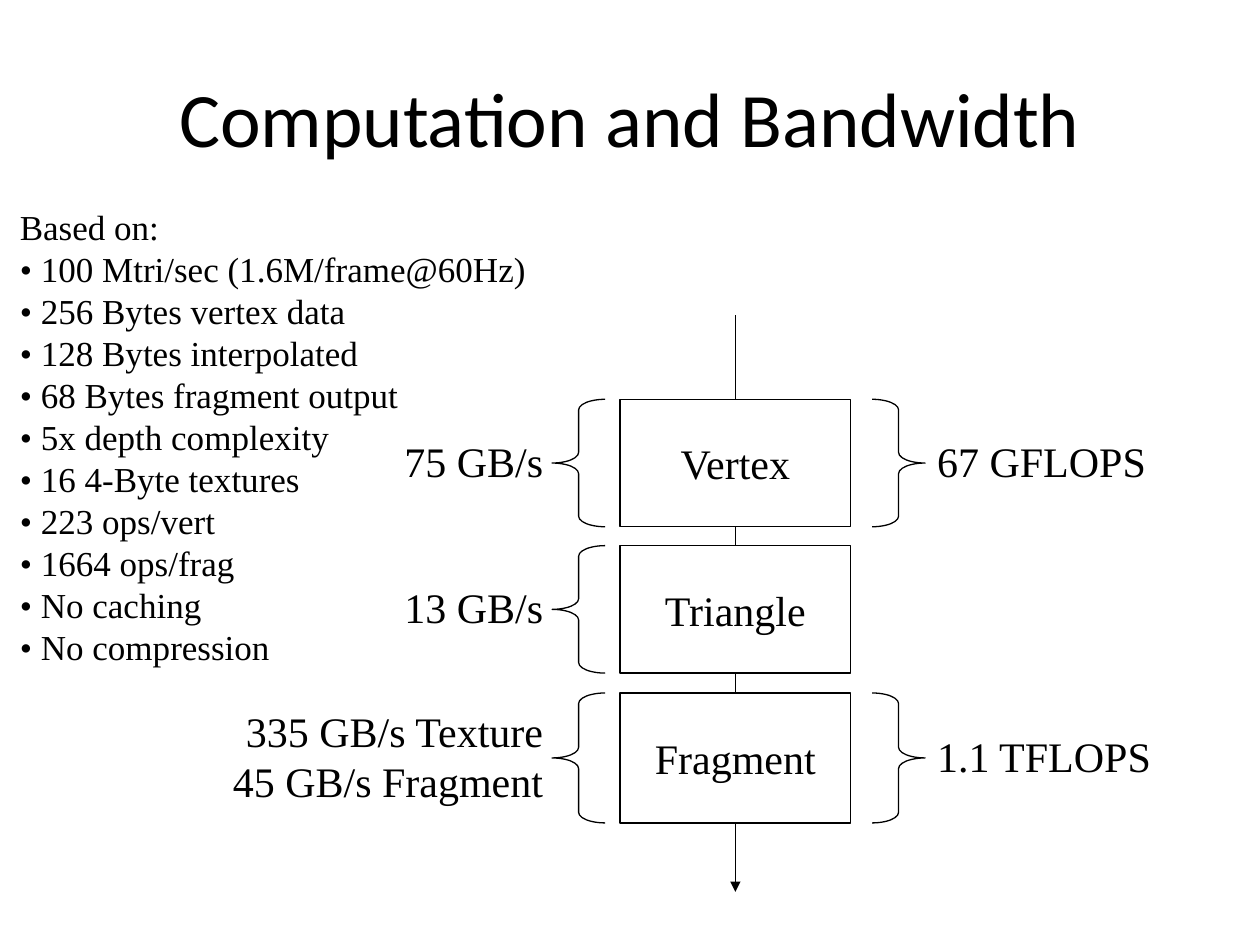
from lxml import etree
from pptx import Presentation
from pptx.dml.color import RGBColor
from pptx.enum import shapes, text
from pptx.oxml import ns
from pptx.util import Cm, Pt

INK = "000000"
SERIF = "Times New Roman"
LEFT, CENTER, RIGHT = text.PP_ALIGN.LEFT, text.PP_ALIGN.CENTER, text.PP_ALIGN.RIGHT

ASSUMPTIONS = [
    "100 Mtri/sec (1.6M/frame@60Hz)",
    "256 Bytes vertex data",
    "128 Bytes interpolated",
    "68 Bytes fragment output",
    "5x depth complexity",
    "16 4-Byte textures",
    "223 ops/vert",
    "1664 ops/frag",
    "No caching",
    "No compression",
]
STAGES = [
    ("Vertex", 8.05, 2.57, ["75 GB/s"], 3.3, "67 GFLOPS", 4.72),
    ("Triangle", 11, 2.57, ["13 GB/s"], 3.3, None, 0),
    ("Fragment", 13.97, 2.62, ["335 GB/s Texture", "45 GB/s Fragment"], 6.76,
     "1.1 TFLOPS", 4.85),
]


def color(value):
    return RGBColor.from_string(value)


def write(shape, lines, size, font=SERIF, align=LEFT,
          anchor=text.MSO_ANCHOR.MIDDLE, wrap=True):
    frame = shape.text_frame
    frame.text = "\n".join(lines)
    frame.word_wrap = wrap
    frame.vertical_anchor = anchor
    for para in frame.paragraphs:
        para.alignment = align
        for span in para.runs:
            span.font.size = Pt(size)
            span.font.name = font
            span.font.color.rgb = color(INK)


def add_text(page, left, top, width, height, lines, size, **style):
    box = page.shapes.add_textbox(Cm(left), Cm(top), Cm(width), Cm(height))
    write(box, lines, size, **style)


def add_outline(page, kind, left, top, width, height):
    shape = page.shapes.add_shape(kind, Cm(left), Cm(top), Cm(width), Cm(height))
    shape.shadow.inherit = False
    shape.fill.background()
    shape.line.color.rgb = color(INK)
    shape.line.width = Pt(0.75)
    return shape


def add_brace(page, kind, left, top, height):
    brace = add_outline(page, kind, left, top, 1.07, height)
    brace.adjustments[0] = 0.2
    brace.adjustments[1] = 0.5


def add_stage(page, left, width, stage):
    name, top, height, bandwidth, bandwidth_width, compute, compute_width = stage
    right = left + width
    label_height = 0.25 + 1.02 * len(bandwidth)
    middle = top + height / 2 - 0.05

    add_brace(page, shapes.MSO_SHAPE.LEFT_BRACE, left - 1.37, top, height)
    add_text(page, left - 1.3 - bandwidth_width, middle - label_height / 2,
             bandwidth_width, label_height, bandwidth, 24, align=RIGHT, wrap=False)
    if compute:
        add_brace(page, shapes.MSO_SHAPE.RIGHT_BRACE, right + 0.43, top, height)
        add_text(page, right + 1.49, middle - 0.64, compute_width, 1.27,
                 [compute], 24, wrap=False)

    block = add_outline(page, shapes.MSO_SHAPE.RECTANGLE, left, top, width, height)
    write(block, [name], 24, align=CENTER)
    return block


def add_flow(page, x, start, end, source=None, target=None):
    line = page.shapes.add_connector(
        shapes.MSO_CONNECTOR.STRAIGHT, Cm(x), Cm(start), Cm(x), Cm(end))
    line.line.color.rgb = color(INK)
    line.line.width = Pt(0.75)
    if source is not None:
        line.begin_connect(source, 2)
    if target is not None:
        line.end_connect(target, 0)
    else:
        head = etree.SubElement(line.line._get_or_add_ln(), ns.qn("a:tailEnd"))
        head.set("type", "triangle")
    etree.SubElement(line._element.spPr, ns.qn("a:effectLst"))


def add_pipeline(page, left, width, start, end):
    blocks = [add_stage(page, left, width, stage) for stage in STAGES]
    for source, target in zip([None] + blocks, blocks + [None]):
        add_flow(page, left + width / 2, start, end, source, target)


def add_title(page, left, top, width, height):
    add_text(page, left, top, width, height, ["Computation and Bandwidth"], 44,
             font="Calibri", align=CENTER)


def add_assumptions(page, left, top, width, height):
    lines = ["Based on:"] + [f"• {item}" for item in ASSUMPTIONS]
    add_text(page, left, top, width, height, lines, 20, anchor=text.MSO_ANCHOR.TOP)


def main():
    deck = Presentation()
    deck.slide_width, deck.slide_height = Cm(25.4), Cm(19.05)
    page = deck.slides.add_slide(deck.slide_layouts[6])
    add_pipeline(page, 12.5, 4.65, 6.35, 17.98)
    add_title(page, 1.27, 0.76, 22.86, 3.18)
    add_assumptions(page, 0.15, 4.01, 12.7, 9.65)
    deck.save("out.pptx")


if __name__ == "__main__":
    main()
